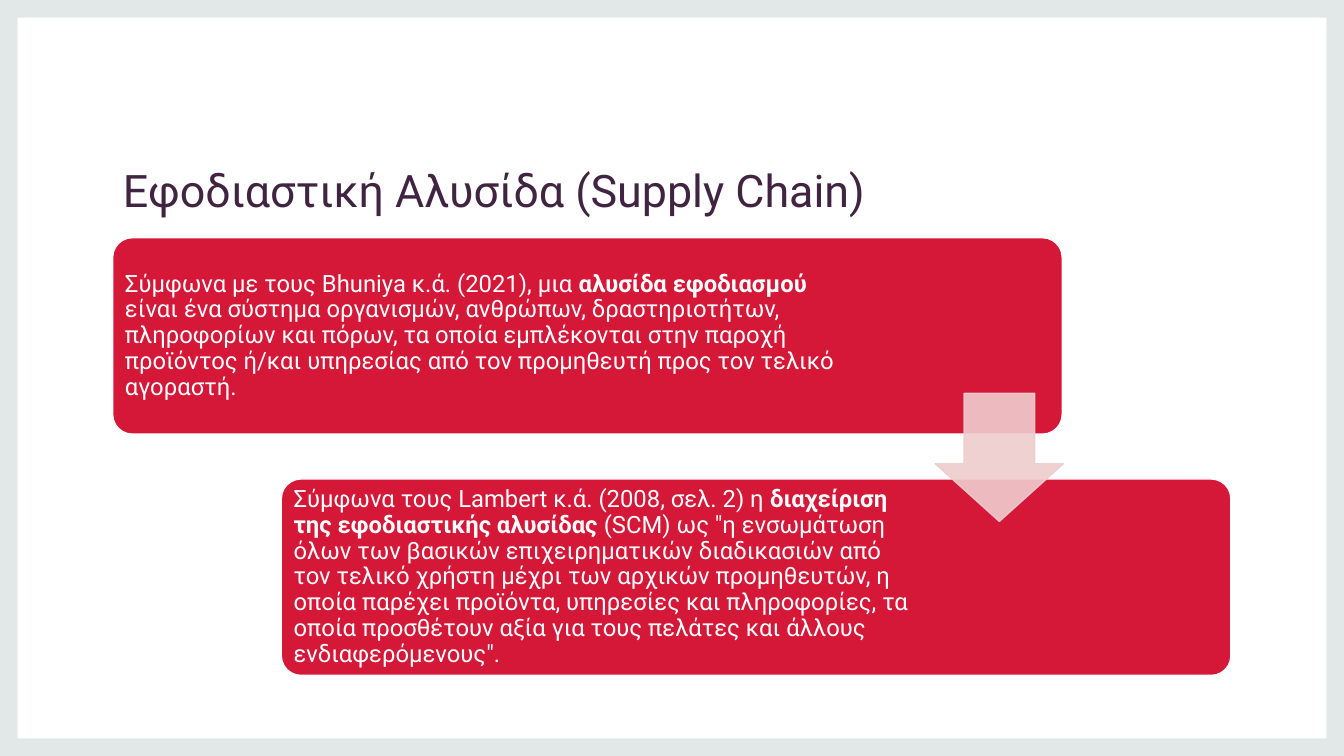
from dataclasses import dataclass

from lxml.etree import SubElement
from pptx import Presentation
from pptx.dml.color import RGBColor as RGB
from pptx.enum.shapes import MSO_SHAPE as SHAPE
from pptx.enum.text import MSO_ANCHOR as ANCHOR, MSO_AUTO_SIZE as AUTO, PP_ALIGN as ALIGN
from pptx.oxml.ns import qn
from pptx.util import Cm, Pt


@dataclass(frozen=True)
class Theme:
    """Colours, font and type sizes of the slide."""
    font: str = "Roboto"
    frame: RGB = RGB(0xE2, 0xE8, 0xE7)
    title: RGB = RGB(0x40, 0x24, 0x41)
    card: RGB = RGB(0xD5, 0x17, 0x38)
    arrow: RGB = RGB(0xEF, 0xCC, 0xCE)
    white: RGB = RGB(0xFF, 0xFF, 0xFF)
    title_size: Pt = Pt(32)
    body_size: Pt = Pt(17)


THEME = Theme()
WIDTH, HEIGHT = 33.87, 19.05
TITLE = "Εφοδιαστική Αλυσίδα (Supply Chain)"
CARD_W, CARD_H = 23.93, 4.95
CARDS = [
    ((2.84, 5.99, CARD_W, CARD_H), 18.8, [
        ("Σύμφωνα με τους Bhuniya κ.ά. (2021), μια ", False),
        ("αλυσίδα εφοδιασμού", True),
        (" είναι ένα σύστημα οργανισμών, ανθρώπων, δραστηριοτήτων, πληροφορίων "
         "και πόρων, τα οποία εμπλέκονται στην παροχή προϊόντος ή/και υπηρεσίας "
         "από τον προμηθευτή προς τον τελικό αγοραστή.", False)]),
    ((7.09, 12.07, CARD_W, CARD_H), 16.18, [
        ("Σύμφωνα τους Lambert κ.ά. (2008, σελ. 2) η ", False),
        ("διαχείριση της εφοδιαστικής αλυσίδας ", True),
        ('(SCM) ως "η ενσωμάτωση όλων των βασικών επιχειρηματικών διαδικασιών '
         "από τον τελικό χρήστη μέχρι των αρχικών προμηθευτών, η οποία παρέχει "
         "προϊόντα, υπηρεσίες και πληροφορίες, τα οποία προσθέτουν αξία για τους "
         'πελάτες και άλλους ενδιαφερόμενους".', False)]),
]


def apply(obj, formats):
    """Set each attribute of obj named in formats."""
    for name, value in formats.items():
        setattr(obj, name, value)


def add_block(shapes, kind, box, fill, line=None, adjustments=()):
    """Add a flat preset shape in the box and return it."""
    sp = shapes.add_shape(kind, *map(Cm, box))
    sp.shadow.inherit = False
    sp.fill.solid()
    sp.fill.fore_color.rgb = fill
    if line is None:
        sp.line.fill.background()
    else:
        sp.line.color.rgb = line
        sp.line.width = Pt(1)
    for i, value in enumerate(adjustments):
        sp.adjustments[i] = value
    return sp


def write_text(tf, runs, frame, paragraph, font):
    """Write one paragraph of (text, bold) runs with the given formats."""
    apply(tf, {"word_wrap": True, "auto_size": AUTO.NONE, **frame})
    p = tf.paragraphs[0]
    apply(p, {"alignment": ALIGN.LEFT, **paragraph})
    for text, bold in runs:
        r = p.add_run()
        r.text = text
        apply(r.font, {"name": THEME.font, "bold": bold, "size": font["size"]})
        r.font.color.rgb = font["color"]


def add_frame(s, box):
    """Draw the border band around the box, behind everything else."""
    sp = add_block(s.shapes, SHAPE.FRAME, box, THEME.frame, adjustments=[0.0233])
    s.shapes.element.insert(2, sp.element)


def add_title(s, box):
    """Place the title placeholder in the box."""
    sp = s.shapes.title
    apply(sp, dict(zip(("left", "top", "width", "height"), map(Cm, box))))
    write_text(sp.text_frame, [(TITLE, False)],
               {"vertical_anchor": ANCHOR.BOTTOM}, {"line_spacing": 1.1},
               {"size": THEME.title_size, "color": THEME.title})


def add_card(shapes, box, text_width, runs):
    """Draw a rounded card in the box with text along its left side."""
    add_block(shapes, SHAPE.ROUNDED_RECTANGLE, box, THEME.card, THEME.white, [0.1])
    x, y, _, h = box
    pad = 0.14
    sp = shapes.add_textbox(*map(Cm, (x + pad, y + pad, text_width, h - 2 * pad)))
    sides = ("left", "top", "right", "bottom")
    frame = {f"margin_{side}": Cm(0.17) for side in sides}
    write_text(sp.text_frame, runs, {"vertical_anchor": ANCHOR.MIDDLE, **frame},
               {"line_spacing": 0.9, "space_after": Pt(6)},
               {"size": THEME.body_size, "color": THEME.white})


def add_step_arrow(shapes, box):
    """Draw the translucent arrow that leads from card to card."""
    sp = add_block(shapes, SHAPE.DOWN_ARROW, box, THEME.arrow, THEME.arrow, [0.55, 0.45])
    for color in sp.element.spPr.iter(qn("a:srgbClr")):
        SubElement(color, qn("a:alpha"), val="90000")


def add_process(s):
    """Group the two staggered cards with the arrow between them."""
    shapes = s.shapes.add_group_shape().shapes
    for box, text_width, runs in CARDS:
        add_card(shapes, box, text_width, runs)
    add_step_arrow(shapes, (23.57, 9.91, 3.23, 3.23))


def main():
    """Build the slide and save it."""
    prs = Presentation()
    apply(prs, {"slide_width": Cm(WIDTH), "slide_height": Cm(HEIGHT)})
    s = prs.slides.add_slide(prs.slide_layouts[5])
    add_frame(s, (0, 0, WIDTH, HEIGHT))
    add_title(s, (2.84, 2.01, 28.14, 3.58))
    add_process(s)
    prs.save("out.pptx")


if __name__ == "__main__":
    main()
